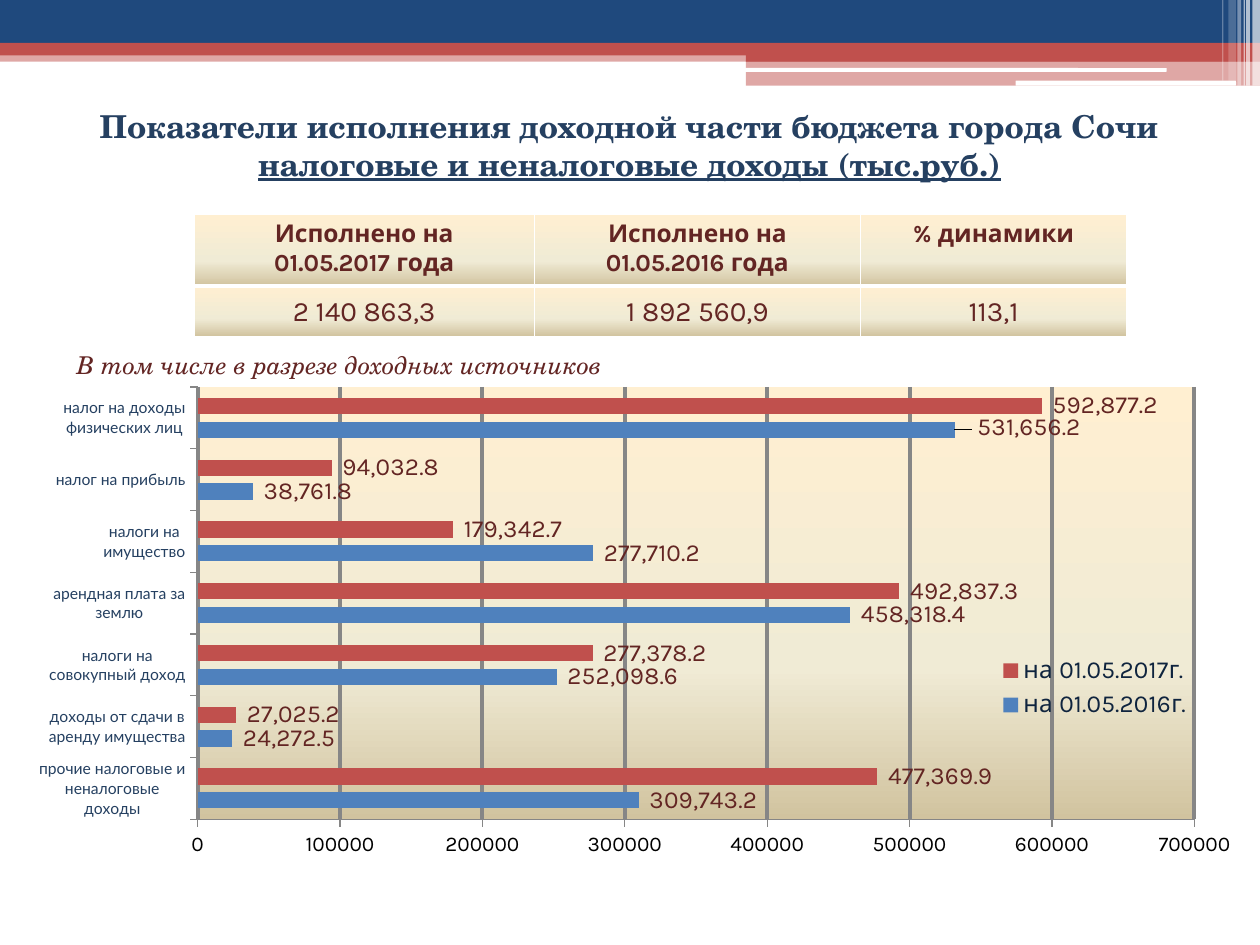
import dataclasses

import lxml.etree
import pptx
import pptx.chart.data
import pptx.dml.color
import pptx.enum.chart
import pptx.enum.shapes
import pptx.enum.text
import pptx.oxml
import pptx.oxml.ns
import pptx.util
from pptx.util import Inches

qn = pptx.oxml.ns.qn
SHAPE = pptx.enum.shapes.MSO_SHAPE
CENTER = pptx.enum.text.PP_ALIGN.CENTER


@dataclasses.dataclass(frozen=True)
class Theme:
    navy: str = "1F497D"
    red: str = "C0504D"
    blue: str = "4F81BD"
    white: str = "FFFFFF"
    black: str = "000000"
    grey: str = "868686"
    title: str = "254061"
    wine: str = "632523"
    ink: str = "0F243E"
    sand: tuple = ((0, "FFEFD1"), (65, "F0EBD5"), (100, "D1C39F"))
    serif: str = "TeX Gyre Schola"
    sans: str = "Karla"
    small: str = "Lato"
    head: int = 18
    big: int = 16
    body: int = 14
    axis: int = 12
    cat: int = 9


T = Theme()
NUM = "_-* #,##0.0_р_._-"
HEADS = ["Исполнено на\n01.05.2017 года", "Исполнено на 01.05.2016 года", "% динамики"]
SUMS = ["2 140 863,3", "1 892 560,9", "113,1"]
CATS = [
    "прочие налоговые и неналоговые доходы",
    "доходы от сдачи в аренду имущества",
    "налоги на совокупный доход",
    "арендная плата за землю",
    "налоги на имущество",
    "налог на прибыль",
    "налог на доходы физических лиц",
]
SERIES = [
    ("на 01.05.2016г.", T.blue,
     [309743.2, 24272.5, 252098.6, 458318.4, 277710.2, 38761.8, 531656.2]),
    ("на 01.05.2017г.", T.red,
     [477369.9, 27025.2, 277378.2, 492837.3, 179342.7, 94032.8, 592877.2]),
]
# left, top, width, height, colour, opacity
BANDS = [
    (0, 0.4, 10, 0.09, T.red, 50),
    (0, 0, 10, 0.34, T.navy, 100),
    (0, 0.34, 10, 0.1, T.red, 100),
    (5.92, 0.39, 4.08, 0.1, T.red, 100),
    (5.92, 0.48, 4.08, 0.2, T.red, 50),
]
SLITS = [(5.91, 0.54, 3.35, 0.03), (8.06, 0.64, 1.75, 0.04)]
# left, width, height, opacity
STRIPES = [
    (9.94, 0.06, 0.68, 65), (9.89, 0.03, 0.68, 65), (9.87, 0.01, 0.68, 60),
    (9.82, 0.03, 0.68, 40), (9.75, 0.06, 0.64, 20), (9.7, 0.01, 0.64, 30),
]


def rgb(color):
    return pptx.dml.color.RGBColor.from_string(color)


def xml(tag, body, attrs=""):
    space = pptx.oxml.ns.nsdecls("a", "c")
    return pptx.oxml.parse_xml(f"<{tag} {space} {attrs}>{body}</{tag}>")


def style(font, size, color, face, bold=False, italic=False):
    font.size = pptx.util.Pt(size)
    font.color.rgb = rgb(color)
    font.name = face
    font.bold = bold
    font.italic = italic


def sand():
    """Vertical three-stop gradient fill."""
    stops = "".join(
        f'<a:gs pos="{at * 1000}"><a:srgbClr val="{color}"/></a:gs>'
        for at, color in T.sand)
    return xml("a:gradFill", f'<a:gsLst>{stops}</a:gsLst><a:lin ang="5400000" scaled="0"/>')


def bar(slide, box, color, alpha=100, kind=SHAPE.RECTANGLE):
    shape = slide.shapes.add_shape(kind, *map(Inches, box))
    shape.shadow.inherit = False
    shape.fill.solid()
    shape.fill.fore_color.rgb = rgb(color)
    shape.line.fill.background()
    if alpha < 100:
        tint = shape.element.spPr.find(".//" + qn("a:srgbClr"))
        lxml.etree.SubElement(tint, qn("a:alpha"), val=str(alpha * 1000))


def banner(slide):
    for *box, color, alpha in BANDS:
        bar(slide, box, color, alpha)
    for box in SLITS:
        bar(slide, box, T.white, kind=SHAPE.ROUNDED_RECTANGLE)
    for left, width, height, alpha in STRIPES:
        bar(slide, (left, 0, width, height), T.white, alpha)


def label(slide, box, lines, size, color, align=None, **look):
    frame = slide.shapes.add_textbox(*map(Inches, box)).text_frame
    frame.word_wrap = True
    frame.text = "\n".join(lines)
    for para in frame.paragraphs:
        para.alignment = align
        style(para.font, size, color, T.serif, **look)
    return frame


def edge(cell, base):
    """White borders, with the bottom one as thick as base, and the gradient."""
    props = cell._tc.get_or_add_tcPr()
    for side, width in zip("LRTB", (1, 1, 1, base)):
        props.append(xml(
            f"a:ln{side}", f'<a:solidFill><a:srgbClr val="{T.white}"/></a:solidFill>',
            f'w="{width * 12700}"'))
    props.append(sand())


def totals(slide):
    table = slide.shapes.add_table(2, 3, *map(Inches, (1.54, 1.7, 7.4, 0.97))).table
    table.first_row = table.horz_banding = False
    for col, width in zip(table.columns, (2.7, 2.59, 2.11)):
        col.width = Inches(width)
    for row, height in zip(table.rows, (0.57, 0.4)):
        row.height = Inches(height)
    for y, texts in enumerate((HEADS, SUMS)):
        for x, text in enumerate(texts):
            cell = table.cell(y, x)
            cell.text = text
            for para in cell.text_frame.paragraphs:
                para.alignment = CENTER
                style(para.font, T.big if y else T.body, T.wine, T.sans, bold=not y)
            if y:
                cell.vertical_anchor = pptx.enum.text.MSO_ANCHOR.MIDDLE
                cell.margin_left = cell.margin_right = cell.margin_top = Inches(0.01)
                cell.margin_bottom = 0
            edge(cell, 1 if y else 3)


def place(x, y, w=None, h=None, inner=False, edged=True):
    """Manual chart layout, in fractions of the chart."""
    body = '<c:layoutTarget val="inner"/>' if inner else ""
    if edged:
        body += '<c:xMode val="edge"/><c:yMode val="edge"/>'
    for key, part in zip("xywh", (x, y, w, h)):
        if part is not None:
            body += f'<c:{key} val="{part}"/>'
    return xml("c:layout", f"<c:manualLayout>{body}</c:manualLayout>")


def stroke(line, width):
    line.color.rgb = rgb(T.grey)
    line.width = pptx.util.Pt(width)


def tune(series, color):
    series.format.fill.solid()
    series.format.fill.fore_color.rgb = rgb(color)
    tags = series.data_labels
    tags.show_value = True
    tags.number_format = NUM
    tags.number_format_is_linked = False
    tags.position = pptx.enum.chart.XL_LABEL_POSITION.OUTSIDE_END
    style(tags.font, T.body, T.wine, T.sans)


def nudge(series, index):
    """Move one value label a little to the right and up."""
    tag = series.points[index].data_label
    style(tag.font, T.body, T.wine, T.sans)
    tag.position = pptx.enum.chart.XL_LABEL_POSITION.OUTSIDE_END
    node = series._element.find(".//" + qn("c:dLbl"))
    node.insert(1, place(0.01, -0.004, edged=False))
    node.insert(2, xml("c:numFmt", "", f'formatCode="{NUM}" sourceLinked="0"'))


def sources(slide):
    data = pptx.chart.data.CategoryChartData()
    data.categories = CATS
    for name, _, values in SERIES:
        data.add_series(name, values)
    chart = slide.shapes.add_chart(
        pptx.enum.chart.XL_CHART_TYPE.BAR_CLUSTERED,
        *map(Inches, (0.31, 2.94, 9.57, 4.54)), data).chart
    chart.has_title = False
    style(chart.font, T.head, T.black, T.serif)
    plot = chart.plots[0]
    plot.gap_width, plot.overlap, plot.vary_by_categories = 134, -45, False
    for series, (_, color, _) in zip(plot.series, SERIES):
        tune(series, color)
    nudge(plot.series[0], 6)

    cat, val = chart.category_axis, chart.value_axis
    style(cat.tick_labels.font, T.cat, T.title, T.small)
    style(val.tick_labels.font, T.axis, T.black, T.sans)
    val.minimum_scale, val.maximum_scale, val.major_unit = 0, 700000, 100000
    val.tick_labels.number_format = "General"
    val.tick_labels.number_format_is_linked = False
    val.has_major_gridlines = True
    stroke(val.major_gridlines.format.line, 2.25)
    for axis in (cat, val):
        axis.major_tick_mark = pptx.enum.chart.XL_TICK_MARK.OUTSIDE
        stroke(axis.format.line, 0.75)

    chart.has_legend = True
    legend = chart.legend
    legend.position = pptx.enum.chart.XL_LEGEND_POSITION.RIGHT
    legend.include_in_layout = False
    style(legend.font, T.body, T.ink, T.sans)
    root = chart._chartSpace
    key = root.find(".//" + qn("c:legend"))
    area = root.find(".//" + qn("c:plotArea"))
    for node, spot in ((key, place(0.79, 0.49, 0.17, 0.13)),
                       (area, place(0.127, 0.029, 0.831, 0.756, inner=True))):
        for old in node.findall(qn("c:layout")):
            node.remove(old)
        node.insert(1 if node is key else 0, spot)
    skin = xml("c:spPr", "")
    skin.append(sand())
    area.append(skin)


def main():
    deck = pptx.Presentation()
    deck.slide_width, deck.slide_height = Inches(10), Inches(7.5)
    slide = deck.slides.add_slide(deck.slide_layouts[6])
    banner(slide)
    sources(slide)
    title = label(slide, (0.31, 0.8, 9.37, 0.71),
                  ["Показатели исполнения доходной части бюджета города Сочи",
                   "налоговые и неналоговые доходы (тыс.руб.)"],
                  T.head, T.title, CENTER, bold=True)
    title.paragraphs[1].font.underline = True
    totals(slide)
    label(slide, (0.51, 2.73, 4.72, 0.34), ["В том числе в разрезе доходных источников"],
          T.body, T.wine, italic=True)
    deck.save("out.pptx")


if __name__ == "__main__":
    main()
